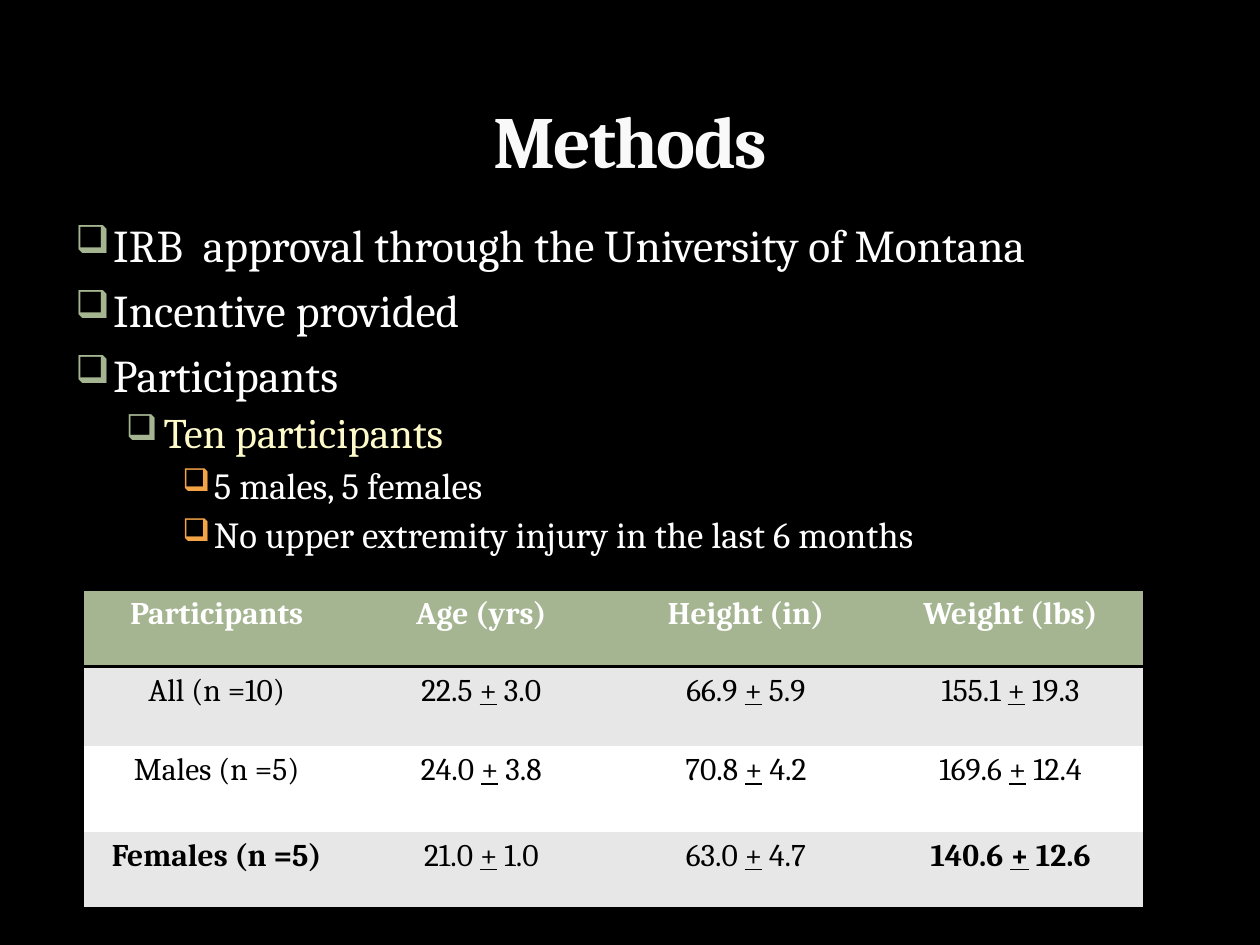
import pptx
import pptx.dml.color
import pptx.enum.text
import pptx.oxml
import pptx.oxml.ns
import pptx.util

# Content
TITLE = "Methods"
POINTS = [  # level, text
    (0, "IRB  approval through the University of Montana"),
    (0, "Incentive provided"),
    (0, "Participants"),
    (1, "Ten participants"),
    (2, "5 males, 5 females"),
    (2, "No upper extremity injury in the last 6 months"),
]
HEAD = ["Participants", "Age (yrs)", "Height (in)", "Weight (lbs)"]
ROWS = [  # label, then (mean, spread) pairs
    ("All (n =10)", ("22.5", "3.0"), ("66.9", "5.9"), ("155.1", "19.3")),
    ("Males (n =5)", ("24.0", "3.8"), ("70.8", "4.2"), ("169.6", "12.4")),
    ("Females (n =5)", ("21.0", "1.0"), ("63.0", "4.7"), ("140.6", "12.6")),
]
STRONG = {(3, 0), (3, 3)}  # bold body cells: row, column

# Look
THEME = {
    "font": "Cambria", "back": "000000", "title": "F9F9F9", "head": "A5B592",
    "white": "FFFFFF", "ink": "000000", "bands": ["E7E7E7", "FFFFFF"],
    "title_pt": 42, "cell_pt": 18, "rule_pt": 2,
    "levels": [  # size, colour, bullet colour, left, hang, space before
        (26, "FFFFFF", "A5B592", 0.3, 0.3, 6),
        (24, "FEFAC9", "A5B592", 0.7, 0.3, 3),
        (21, "FFFFFF", "F3A447", 1.1, 0.25, 3),
    ],
}
COL = 2.1
HEIGHTS = [0.61, 0.63, 0.68, 0.61]
PLAIN = "{2D5ABB26-0587-4C30-8999-92F81FD0307C}"  # style without grid

Inches, Pt = pptx.util.Inches, pptx.util.Pt
CENTER = pptx.enum.text.PP_ALIGN.CENTER
rgb = pptx.dml.color.RGBColor.from_string


def node(xml):
    head, rest = xml.split(" ", 1)
    return pptx.oxml.parse_xml(f"{head} {pptx.oxml.ns.nsdecls('a')} {rest}")


def add_run(para, text, size, color, bold=False, under=None):
    run = para.add_run()
    run.text = text
    font = run.font
    font.name, font.size, font.bold = THEME["font"], Pt(size), bold
    font.underline = under
    font.color.rgb = rgb(color)
    return run


def add_box(slide, left, top, width, height):
    frame = slide.shapes.add_textbox(*map(Inches, (left, top, width, height))).text_frame
    frame.word_wrap = True
    return frame


def add_title(slide):
    frame = add_box(slide, 0.5, 0.17, 9, 1.33)
    frame.vertical_anchor = pptx.enum.text.MSO_ANCHOR.BOTTOM
    para = frame.paragraphs[0]
    para.alignment = CENTER
    run = add_run(para, TITLE, THEME["title_pt"], THEME["title"], True)
    run.font._element.set("spc", "-100")


def add_points(slide):
    frame = add_box(slide, 0.5, 1.67, 9, 5.42)
    for i, (level, text) in enumerate(POINTS):
        size, color, mark, left, hang, gap = THEME["levels"][level]
        para = frame.add_paragraph() if i else frame.paragraphs[0]
        para.level = level
        para.space_before = Pt(gap)
        props = para._p.get_or_add_pPr()
        props.set("marL", str(Inches(left)))
        props.set("indent", str(-Inches(hang)))
        for xml in (f'<a:buClr ><a:srgbClr val="{mark}"/></a:buClr>',
                    '<a:buSzPct val="85000"/>',
                    '<a:buChar char="❑"/>'):
            props.append(node(xml))
        add_run(para, text, size, color)


def add_rule(cell, side):
    line = node(f'<a:ln{side} w="{Pt(THEME["rule_pt"])}"><a:solidFill>'
                f'<a:srgbClr val="{THEME["ink"]}"/></a:solidFill></a:ln{side}>')
    cell._tc.get_or_add_tcPr().insert(0, line)


def fill_cell(cell, r, c, item):
    band = THEME["bands"][(r - 1) % 2] if r else THEME["head"]
    color = THEME["ink"] if r else THEME["white"]
    bold = r == 0 or (r, c) in STRONG
    cell.fill.solid()
    cell.fill.fore_color.rgb = rgb(band)
    para = cell.text_frame.paragraphs[0]
    para.alignment = CENTER
    if isinstance(item, str):
        parts = [(item, None)]
    else:
        parts = [(item[0] + " ", None), ("+", True), (" " + item[1], None)]
    for text, under in parts:
        add_run(para, text, THEME["cell_pt"], color, bold, under)
    if r in (0, len(ROWS)):
        add_rule(cell, "B")
    if r == 0:
        add_rule(cell, "T")


def add_grid(slide):
    data = [HEAD, *ROWS]
    frame = slide.shapes.add_table(
        len(data), len(HEAD), Inches(0.67), Inches(4.68),
        Inches(COL * len(HEAD)), Inches(sum(HEIGHTS)))
    table = frame.table
    table.horz_banding = table.first_row = False
    for style in frame._element.iter(pptx.oxml.ns.qn("a:tableStyleId")):
        style.text = PLAIN
    for col in table.columns:
        col.width = Inches(COL)
    for r, (row, high) in enumerate(zip(data, HEIGHTS)):
        table.rows[r].height = Inches(high)
        for c, item in enumerate(row):
            fill_cell(table.cell(r, c), r, c, item)


def main():
    deck = pptx.Presentation()
    deck.slide_width, deck.slide_height = Inches(10), Inches(7.5)
    slide = deck.slides.add_slide(deck.slide_layouts[6])
    slide.background.fill.solid()
    slide.background.fill.fore_color.rgb = rgb(THEME["back"])
    add_points(slide)
    add_title(slide)
    add_grid(slide)
    deck.save("out.pptx")


if __name__ == "__main__":
    main()
